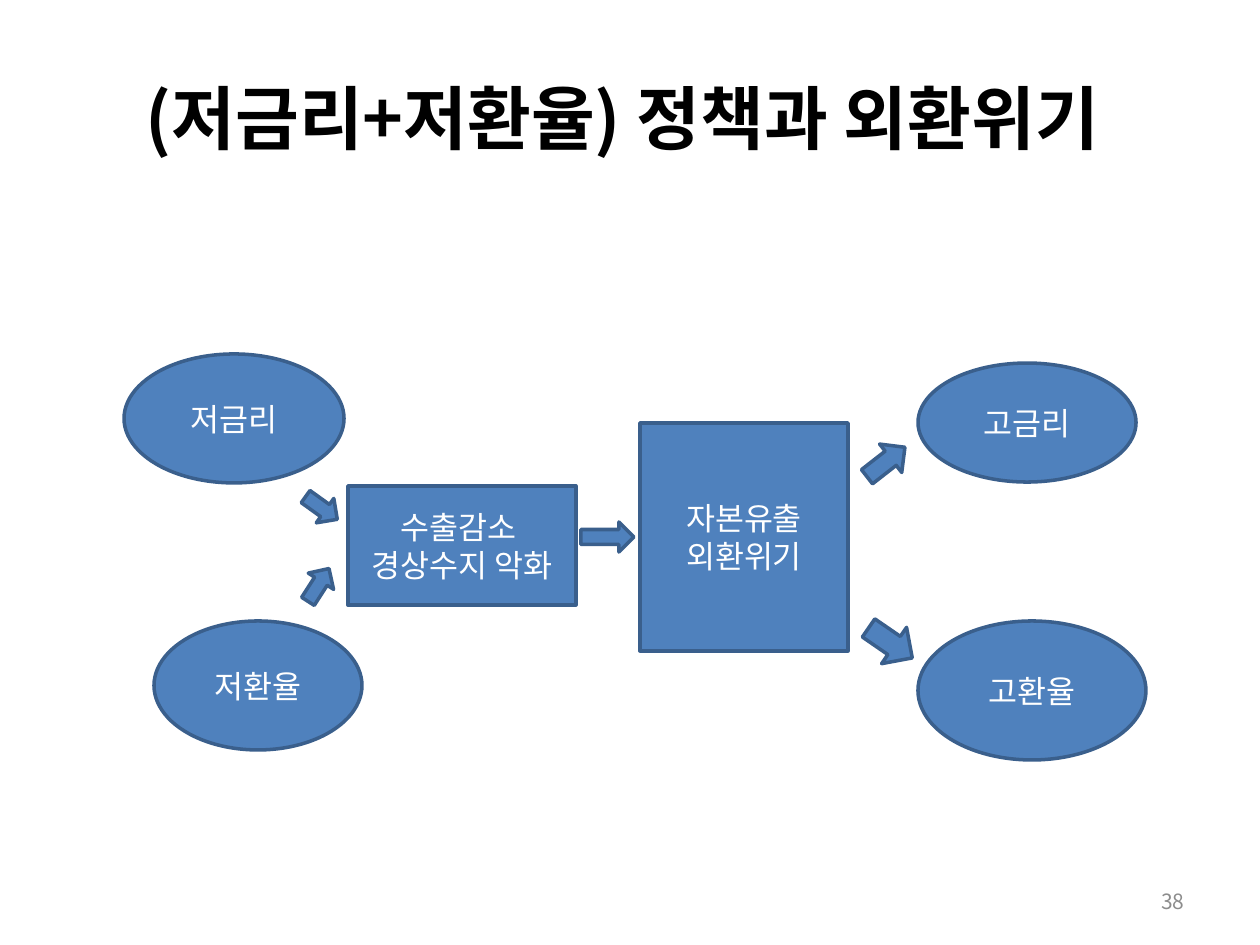
from lxml import etree
from pptx import Presentation
from pptx.dml.color import RGBColor as RGB
from pptx.enum.shapes import MSO_SHAPE as SHAPE
from pptx.enum.text import MSO_ANCHOR as ANCHOR, PP_ALIGN as ALIGN
from pptx.oxml.ns import qn
from pptx.util import Emu, Pt

THEME = {
    "font": "Noto Sans CJK KR",
    "fill": RGB(0x4F, 0x81, 0xBD),
    "line": RGB(0x3A, 0x5F, 0x8C),
    "line_width": Pt(2),
    "title": {"size": Pt(39.6), "bold": True, "color": RGB(0, 0, 0)},
    "label": {"size": Pt(18), "bold": False, "color": RGB(255, 255, 255)},
    "number": {"size": Pt(12), "bold": False, "color": RGB(0x8C, 0x8C, 0x8C)},
}


def px(*values):
    return [Emu(round(v * 914400 / 126)) for v in values]


def write(sp, lines, style, align=ALIGN.CENTER):
    tf = sp.text_frame
    for name, value in {"word_wrap": True, "vertical_anchor": ANCHOR.MIDDLE}.items():
        setattr(tf, name, value)
    for i, line in enumerate(lines):
        p = tf.add_paragraph() if i else tf.paragraphs[0]
        p.alignment = align
        r = p.add_run()
        r.text = line
        for name, value in {"name": THEME["font"], "size": style["size"], "bold": style["bold"]}.items():
            setattr(r.font, name, value)
        r.font.color.rgb = style["color"]
        etree.SubElement(r.font._element, qn("a:ea"), typeface=THEME["font"])


prs = Presentation()
prs.slide_width, prs.slide_height = px(1260, 945)
s = prs.slides.add_slide(prs.slide_layouts[6])

title = s.shapes.add_textbox(*px(63, 38, 1134, 157))
write(title, ["(저금리+저환율) 정책과 외환위기 "], THEME["title"])
number = s.shapes.add_textbox(*px(903, 876, 294, 50))
write(number, ["38"], THEME["number"], ALIGN.RIGHT)

nodes = [
    (SHAPE.OVAL, (124, 354, 220, 129), ["저금리"]),
    (SHAPE.OVAL, (154, 621, 208, 129), ["저환율"]),
    (SHAPE.RECTANGLE, (348, 486, 228, 119), ["수출감소 ", "경상수지 악화"]),
    (SHAPE.RECTANGLE, (640, 423, 208, 228), ["자본유출", "외환위기"]),
    (SHAPE.OVAL, (918, 363, 218, 119), ["고금리"]),
    (SHAPE.OVAL, (918, 621, 228, 139), ["고환율"]),
]
arrows = [
    ((302, 493, 39, 30), 35.7),
    ((299, 570, 39, 30), 302.7),
    ((581, 522, 53, 30), 0),
    ((862, 444, 48, 36), 322.1),
    ((864, 621, 53, 44), 34.5),
]
parts = [(kind, box, 0, lines) for kind, box, lines in nodes]
parts += [(SHAPE.RIGHT_ARROW, box, angle, []) for box, angle in arrows]

for kind, box, angle, lines in parts:
    sp = s.shapes.add_shape(kind, *px(*box))
    sp.rotation = angle
    sp.shadow.inherit = False
    sp.fill.solid()
    sp.fill.fore_color.rgb = THEME["fill"]
    sp.line.color.rgb = THEME["line"]
    sp.line.width = THEME["line_width"]
    write(sp, lines, THEME["label"])

prs.save("out.pptx")
